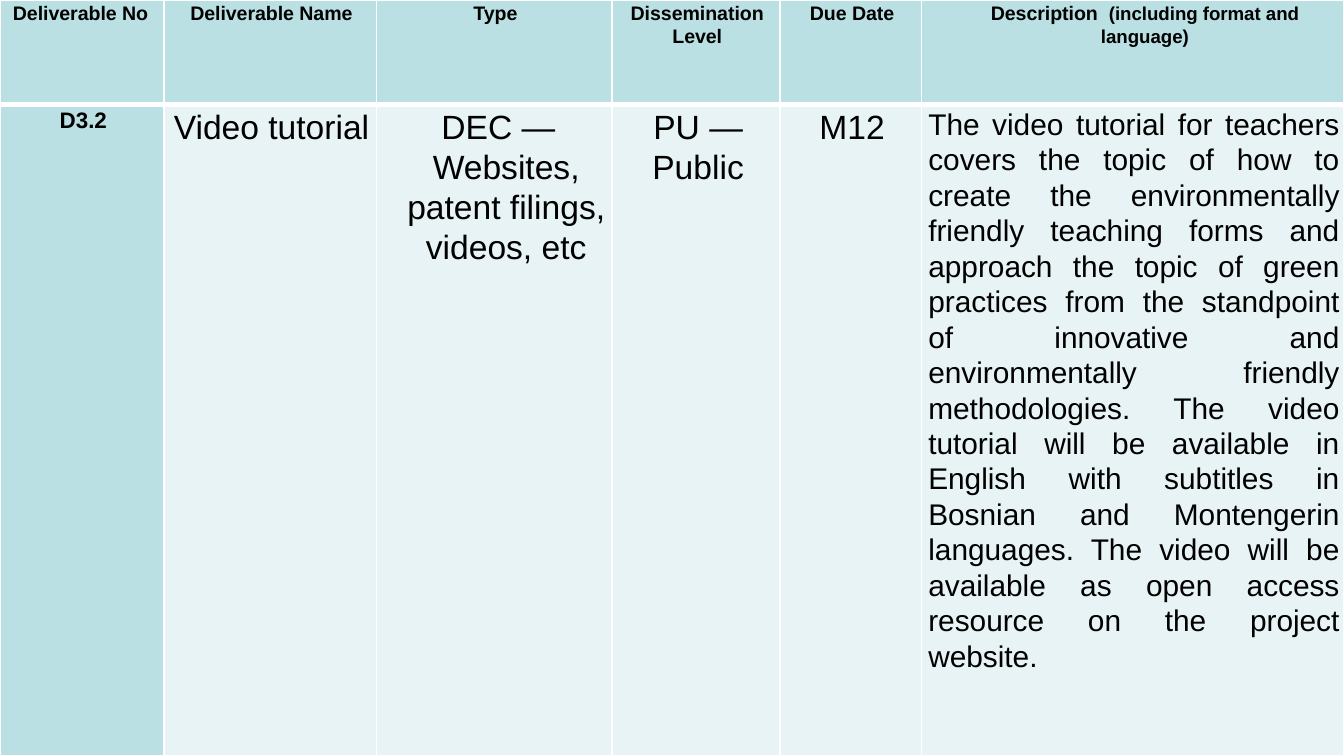
from dataclasses import dataclass

from lxml import etree
from pptx import Presentation
from pptx.dml.color import RGBColor
from pptx.enum.text import PP_ALIGN
from pptx.oxml.ns import qn
from pptx.util import Cm, Pt

CENTER = PP_ALIGN.CENTER
JUSTIFY = PP_ALIGN.JUSTIFY


@dataclass(frozen=True)
class Theme:
    font: str = "Arial"
    text: str = "000000"
    head: str = "BBE0E3"
    body: str = "E7F3F4"
    border: str = "FFFFFF"
    head_size: float = 10.5
    note_size: float = 10
    code_size: float = 12
    body_size: float = 18
    desc_size: float = 16
    thin: float = 1
    thick: float = 3


THEME = Theme()
SLIDE_W, SLIDE_H = 25.4, 14.29
COLS = [3.1, 4.01, 4.45, 3.18, 2.67, 7.98]
ROWS = [1.98, 12.31]
MARGINS = {"margin_left": Cm(0.13), "margin_top": Cm(0.03),
           "margin_right": Cm(0.08), "margin_bottom": Cm(0.03)}

HEADERS = [
    "Deliverable No ", "Deliverable Name", "Type", "Dissemination Level",
    "Due Date", "Description  ",
]
HEADER_NOTE = "(including format and language)"
DESCRIPTION = (
    "The video tutorial for teachers covers the topic of how to create the "
    "environmentally friendly teaching forms and approach the topic of green "
    "practices from the standpoint of innovative and environmentally friendly "
    "methodologies. The video tutorial will be available in English with "
    "subtitles in Bosnian and Montengerin languages. The video will be "
    "available as open access resource on the project website."
)


def header_cells():
    cells = [{"runs": [(text, THEME.head_size)], "bold": True, "fill": THEME.head}
             for text in HEADERS]
    cells[-1]["runs"].append((HEADER_NOTE, THEME.note_size))
    cells[-1]["indent"] = (0.41, 0)
    return cells


def body_cells():
    size = THEME.body_size
    return [
        {"runs": [("D3.2", THEME.code_size)], "bold": True, "fill": THEME.head},
        {"runs": [("Video tutorial", size)]},
        {"runs": [("DEC —Websites, patent filings, videos, etc", size)],
         "indent": (0.41, -0.3)},
        {"runs": [("PU — Public", size)], "indent": (0.03, 0)},
        {"runs": [("M12", size)]},
        {"runs": [(DESCRIPTION, THEME.desc_size)], "align": JUSTIFY},
    ]


def set_attrs(obj, values):
    for name, value in values.items():
        setattr(obj, name, value)


def set_borders(cell, top, bottom):
    tcPr = cell._tc.get_or_add_tcPr()
    widths = {"a:lnL": THEME.thin, "a:lnR": THEME.thin,
              "a:lnT": top, "a:lnB": bottom}
    for tag, width in widths.items():
        ln = etree.SubElement(tcPr, qn(tag), w=str(Pt(width)))
        fill = etree.SubElement(ln, qn("a:solidFill"))
        etree.SubElement(fill, qn("a:srgbClr"), val=THEME.border)


def fill_cell(cell, runs, bold=False, fill=THEME.body, align=CENTER, indent=(0, 0)):
    set_attrs(cell, MARGINS)
    cell.fill.solid()
    cell.fill.fore_color.rgb = RGBColor.from_string(fill)
    p = cell.text_frame.paragraphs[0]
    set_attrs(p, {"alignment": align, "line_spacing": 1.07, "space_after": Pt(8)})
    pPr = p._p.get_or_add_pPr()
    for name, value in zip(("marL", "indent"), indent):
        pPr.set(name, str(Cm(value)))
    for text, size in runs:
        r = p.add_run()
        r.text = text
        set_attrs(r.font, {"name": THEME.font, "size": Pt(size), "bold": bold})
        r.font.color.rgb = RGBColor.from_string(THEME.text)


def add_deliverable_table(s, left, top, width, height):
    table = s.shapes.add_table(len(ROWS), len(COLS), Cm(left), Cm(top),
                               Cm(width), Cm(height)).table
    set_attrs(table, {"first_row": False, "horz_banding": False})
    for column, share in zip(table.columns, COLS):
        column.width = Cm(width * share / sum(COLS))
    for row, share in zip(table.rows, ROWS):
        row.height = Cm(height * share / sum(ROWS))
    edges = [THEME.thin, THEME.thick, THEME.thin]
    for i, cells in enumerate((header_cells(), body_cells())):
        for j, values in enumerate(cells):
            cell = table.cell(i, j)
            set_borders(cell, edges[i], edges[i + 1])
            fill_cell(cell, **values)


def main():
    prs = Presentation()
    set_attrs(prs, {"slide_width": Cm(SLIDE_W), "slide_height": Cm(SLIDE_H)})
    s = prs.slides.add_slide(prs.slide_layouts[6])
    add_deliverable_table(s, 0, 0, SLIDE_W, SLIDE_H)
    prs.save("out.pptx")


if __name__ == "__main__":
    main()
